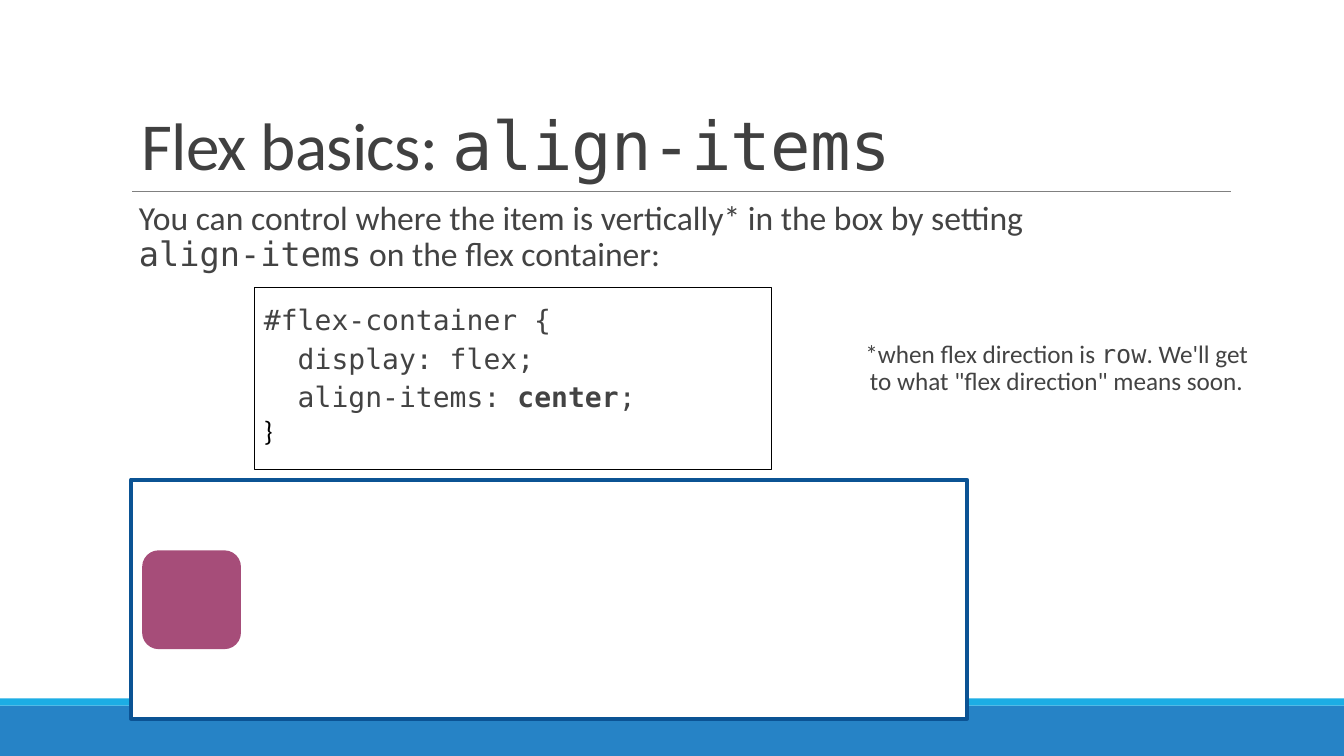
from dataclasses import dataclass

import lxml.etree
import pptx
import pptx.dml.color
import pptx.enum.shapes
import pptx.enum.text
import pptx.oxml.ns
import pptx.util

Inches = pptx.util.Inches
Shapes = pptx.enum.shapes.MSO_SHAPE
Align = pptx.enum.text.PP_ALIGN
Anchor = pptx.enum.text.MSO_ANCHOR


@dataclass(frozen=True)
class Theme:
    sans: str = "Calibri"
    mono: str = "DejaVu Sans Mono"
    title_size: int = 48
    body_size: int = 24
    code_size: int = 20
    note_size: int = 18
    title: str = "404040"
    text: str = "434343"
    black: str = "000000"
    white: str = "FFFFFF"
    rule: str = "808080"
    footer: str = "2683C6"
    footer_edge: str = "1CADE4"
    container: str = "0B5394"
    item: str = "A64D79"


THEME = Theme()


def rgb(color):
    return pptx.dml.color.RGBColor.from_string(color)


def place(shape, left, top, width, height):
    shape.left, shape.top = Inches(left), Inches(top)
    shape.width, shape.height = Inches(width), Inches(height)


def prepare_frame(shape, anchor=Anchor.TOP):
    frame = shape.text_frame
    frame.word_wrap = True
    frame.auto_size = pptx.enum.text.MSO_AUTO_SIZE.NONE
    frame.vertical_anchor = anchor
    frame.margin_left = frame.margin_right = Inches(0.1)
    frame.margin_top = frame.margin_bottom = Inches(0.1)
    return frame


def write_paragraph(paragraph, runs, size, color, spacing, align=Align.LEFT):
    """Fill a paragraph from (text, font name) or (text, font name, bold) runs."""
    paragraph.alignment = align
    paragraph.line_spacing = spacing
    paragraph.space_before = paragraph.space_after = pptx.util.Pt(0)
    paragraph.font.size = pptx.util.Pt(size)
    paragraph.font.color.rgb = rgb(color)
    for text, font_name, *bold in runs:
        run = paragraph.add_run()
        run.text = text
        run.font.name = font_name
        if bold:
            run.font.bold = bold[0]


def add_title(slide, box, runs):
    title = slide.shapes.title
    place(title, *box)
    paragraph = prepare_frame(title, Anchor.MIDDLE).paragraphs[0]
    write_paragraph(paragraph, runs, THEME.title_size, THEME.title, 0.85)
    for run in paragraph.runs:
        run.font._element.set("spc", "-50")


def add_text(slide, box, runs, size, align=Align.LEFT):
    shape = slide.shapes.add_textbox(*map(Inches, box))
    paragraph = prepare_frame(shape).paragraphs[0]
    write_paragraph(paragraph, runs, size, THEME.text, 0.9, align)


def add_box(slide, box, fill=None, line=None, line_width=0, kind=Shapes.RECTANGLE):
    shape = slide.shapes.add_shape(kind, *map(Inches, box))
    shape.shadow.inherit = False
    if fill:
        shape.fill.solid()
        shape.fill.fore_color.rgb = rgb(fill)
    else:
        shape.fill.background()
    if line:
        shape.line.color.rgb = rgb(line)
        shape.line.width = pptx.util.Pt(line_width)
    else:
        shape.line.fill.background()
    return shape


def add_rule(slide, left, right, top):
    rule = slide.shapes.add_connector(
        pptx.enum.shapes.MSO_CONNECTOR.STRAIGHT,
        Inches(left), Inches(top), Inches(right), Inches(top))
    rule.line.color.rgb = rgb(THEME.rule)
    rule.line.width = pptx.util.Pt(0.5)
    lxml.etree.SubElement(rule._element.spPr, pptx.oxml.ns.qn("a:effectLst"))


def add_code(slide, box, lines):
    """Add a framed code block whose last line is the closing brace."""
    frame = prepare_frame(add_box(slide, box, line=THEME.black, line_width=0.75))
    for index, runs in enumerate(lines):
        paragraph = frame.paragraphs[0] if index == 0 else frame.add_paragraph()
        write_paragraph(paragraph, runs, THEME.code_size, THEME.text, 1.15)
    closing = frame.add_paragraph()
    write_paragraph(closing, [("}", THEME.sans)], THEME.code_size, THEME.black, 1.0)


def main():
    presentation = pptx.Presentation()
    presentation.slide_width = Inches(13.33)
    presentation.slide_height = Inches(7.5)
    slide = presentation.slides.add_slide(presentation.slide_layouts[5])
    sans, mono = THEME.sans, THEME.mono

    add_box(slide, (0, 7, 13.33, 0.5), THEME.footer)
    add_box(slide, (0, 6.93, 13.33, 0.07), THEME.footer_edge)
    add_rule(slide, 1.31, 12.21, 1.9)

    add_title(slide, (1.3, 1.07, 8.29, 0.83),
              [("Flex basics: ", sans), ("align-items", mono)])
    add_text(slide, (1.28, 1.9, 9.91, 0.98), [
        ("You can control where the item is vertically* in the box by setting ", sans),
        ("align-items", mono),
        (" on the flex container:", sans),
    ], THEME.body_size)
    add_text(slide, (8.44, 3.29, 4.08, 0.84), [
        ("*when flex direction is ", sans),
        ("row", mono),
        (". We'll get to what \"flex direction\" means soon.", sans),
    ], THEME.note_size, Align.CENTER)

    add_box(slide, (1.3, 4.76, 8.29, 2.37), THEME.white, THEME.container, 3)
    add_box(slide, (1.41, 5.46, 0.98, 0.98), THEME.item, kind=Shapes.ROUNDED_RECTANGLE)
    add_code(slide, (2.52, 2.85, 5.13, 1.81), [
        [("#flex-container {", mono)],
        [("  display: flex;", mono)],
        [("  align-items: ", mono), ("center", mono, True), (";", mono)],
    ])
    presentation.save("out.pptx")


if __name__ == "__main__":
    main()
